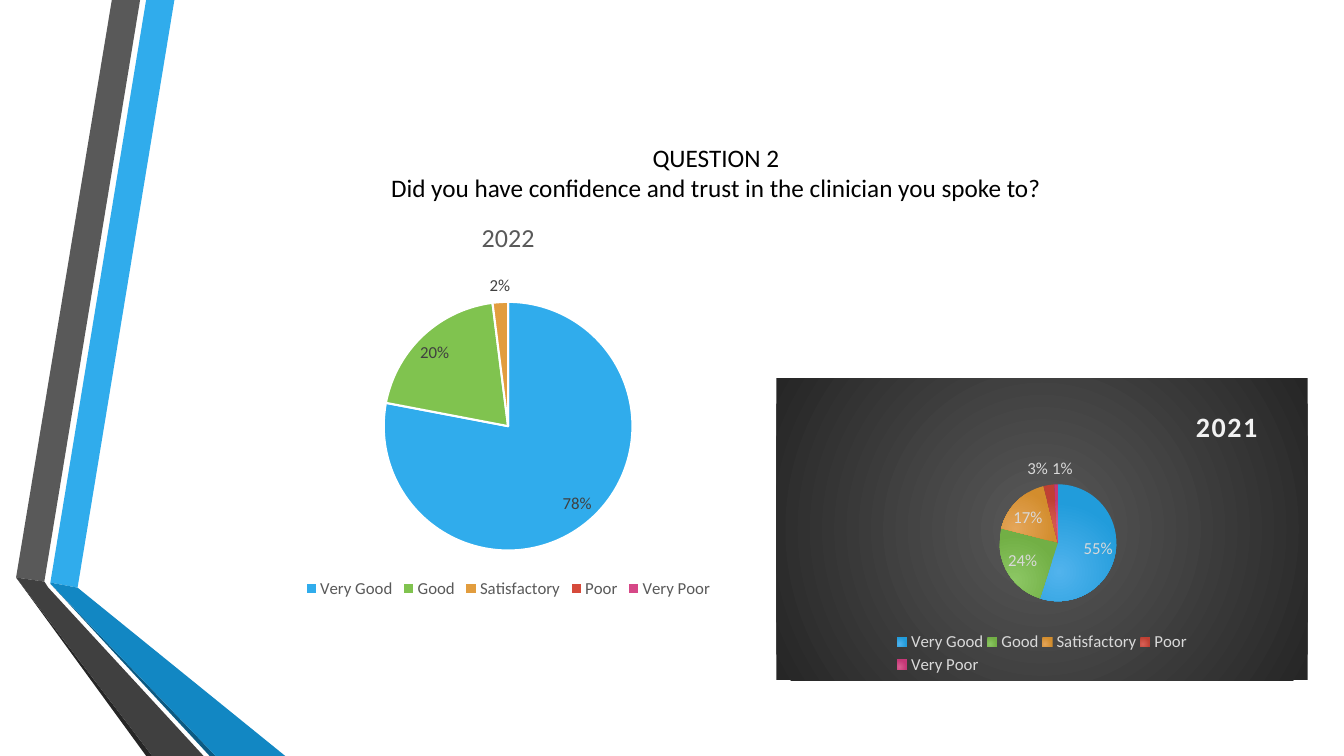
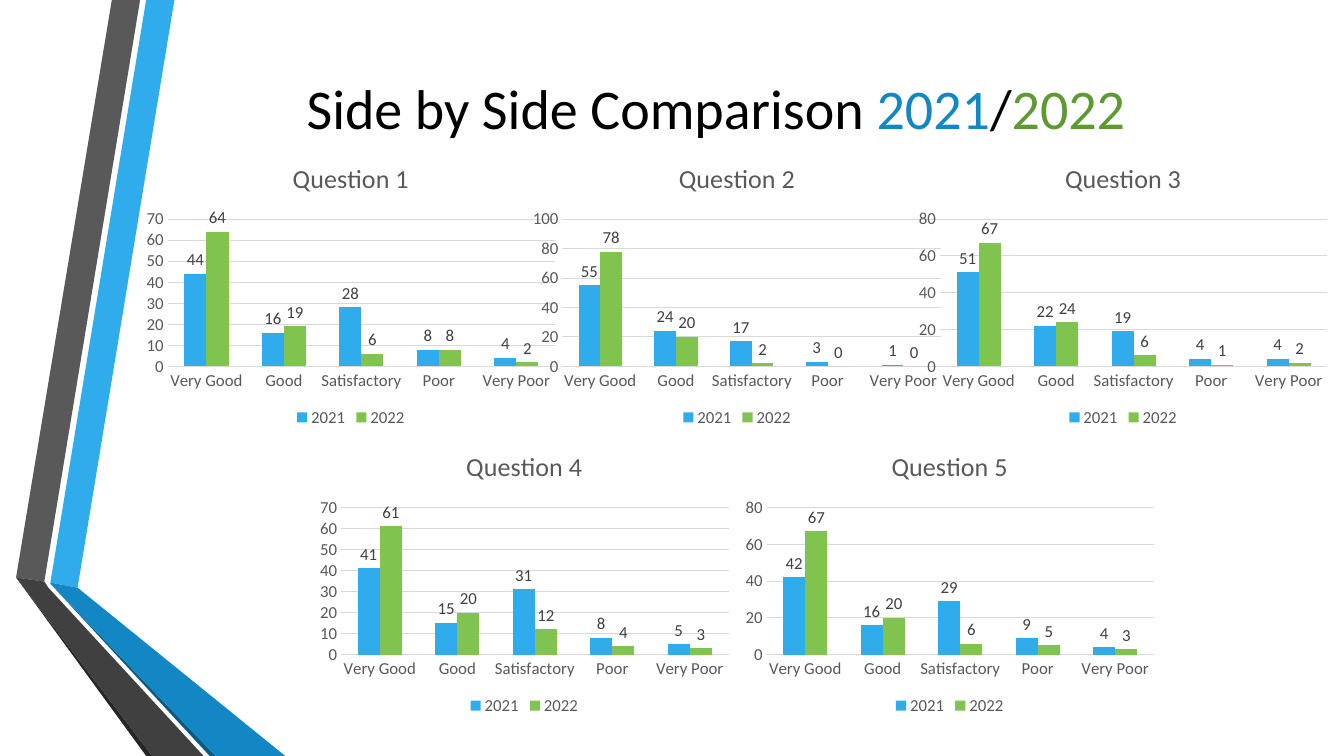
"""Builds two survey slides: a pie for each year and a column chart for each question."""
from pptx import Presentation
from pptx.chart.data import CategoryChartData
from pptx.dml.color import RGBColor
from pptx.enum.chart import XL_CHART_TYPE, XL_LABEL_POSITION, XL_LEGEND_POSITION, XL_TICK_MARK
from pptx.enum.text import MSO_ANCHOR, MSO_AUTO_SIZE, PP_ALIGN
from pptx.oxml import parse_xml
from pptx.oxml.ns import nsdecls, qn
from pptx.util import Inches, Pt

FONT = "Calibri"
COLORS = {
    "black": "000000", "white": "FFFFFF", "text": "595959", "label": "404040",
    "grid": "D9D9D9", "pale": "D9D9D9", "heading": "F2F2F2", "charcoal": "262626",
    "navy": "0C5A82", "deep_blue": "1287C3", "deep_green": "5F9934",
    "blue": "30ACEC", "green": "80C34F", "orange": "E29D3E",
    "red": "D64A3B", "pink": "D64787",
}
BANDS = [
    ("blue", [(0.5, 5.78), (0.77, 5.83), (1.73, 0), (1.45, 0)]),
    ("text", [(1.39, 0), (1.11, 0), (0.16, 5.73), (0.44, 5.77)]),
    ("charcoal", [(0.16, 5.73), (1.45, 7.5), (1.51, 7.5)]),
    ("navy", [(0.5, 5.79), (2.08, 7.5), (2.14, 7.5)]),
    ("deep_blue", [(0.5, 5.78), (0.5, 5.79), (2.14, 7.5), (2.83, 7.5), (0.77, 5.83)]),
    ("label", [(2.02, 7.5), (0.48, 5.83), (0.44, 5.77), (0.16, 5.73), (1.51, 7.5)]),
]
ANSWERS = ["Very Good", "Good", "Satisfactory", "Poor", "Very Poor"]
ANSWER_COLORS = ["blue", "green", "orange", "red", "pink"]
ANSWER_GRADIENTS = [("51B3ED", "219CDB"), ("8CC764", "72AF45"), ("E4A559", "D38D2D"),
                    ("D96157", "C04033"), ("D95F92", "C63777")]
QUESTIONS = [
    {"2021": [44, 16, 28, 8, 4], "2022": [64, 19, 6, 8, 2]},
    {"2021": [55, 24, 17, 3, 1], "2022": [78, 20, 2, 0, 0]},
    {"2021": [51, 22, 19, 4, 4], "2022": [67, 24, 6, 1, 2]},
    {"2021": [41, 15, 31, 8, 5], "2022": [61, 20, 12, 4, 3]},
    {"2021": [42, 16, 29, 9, 4], "2022": [67, 20, 6, 5, 3]},
]
TRUST = QUESTIONS[1]
TRUST_TITLE = [("QUESTION 2", "black"), ("\v", "black"),
               ("Did you have confidence and trust in the clinician you spoke to?", "black")]
COMPARISON_TITLE = [("Side by Side Comparison ", "black"), ("2021", "deep_blue"),
                    ("/", "black"), ("2022", "deep_green")]
CHART_SIZE = (4.22, 2.85)
CHART_ROWS = [(1.37, 1.43, 3.83, 3), (3.09, 4.29, 4.22, 2)]


def rgb(name):
    return RGBColor.from_string(COLORS[name])


def style_font(font, size, color, bold=False):
    values = {"name": FONT, "size": Pt(size), "bold": bold}
    for attribute, value in values.items():
        setattr(font, attribute, value)
    font.color.rgb = rgb(color)


def add_bands(slide, layout):
    for placeholder in list(layout.placeholders)[1:]:
        placeholder.element.getparent().remove(placeholder.element)
    title = layout.placeholders[0].element
    for color, points in BANDS:
        corners = [(Inches(x), Inches(y)) for x, y in points]
        builder = slide.shapes.build_freeform(*corners[0])
        builder.add_line_segments(corners[1:], close=True)
        band = builder.convert_to_shape()
        band.shadow.inherit = False
        band.fill.solid()
        band.fill.fore_color.rgb = rgb(color)
        band.line.fill.background()
        title.addprevious(band.element)


def set_title(slide, runs, top, size):
    title = slide.shapes.title
    box = {"left": 1.62, "top": top, "width": 10.96, "height": 1.92}
    for attribute, value in box.items():
        setattr(title, attribute, Inches(value))
    frame = title.text_frame
    frame.auto_size = MSO_AUTO_SIZE.NONE
    frame.vertical_anchor = MSO_ANCHOR.MIDDLE
    paragraph = frame.paragraphs[0]
    paragraph.alignment = PP_ALIGN.CENTER
    for text, color in runs:
        if text == "\v":
            paragraph.add_line_break()
            continue
        run = paragraph.add_run()
        run.text = text
        style_font(run.font, size, color)


def add_survey_chart(slide, kind, box, title, series, text="text", label="label"):
    data = CategoryChartData()
    data.categories = ANSWERS
    for name, values in series.items():
        data.add_series(name, values)
    chart = slide.shapes.add_chart(kind, *[Inches(value) for value in box], data).chart
    style_font(chart.font, 12, text)
    chart.has_title = True
    paragraph = chart.chart_title.text_frame.paragraphs[0]
    run = paragraph.add_run()
    run.text = title
    style_font(run.font, 18.6, text)
    chart.has_legend = True
    chart.legend.position = XL_LEGEND_POSITION.BOTTOM
    chart.legend.include_in_layout = False
    style_font(chart.legend.font, 12, text)
    plot = chart.plots[0]
    plot.has_data_labels = True
    style_font(plot.data_labels.font, 12, label)
    return chart


def add_pie(slide, box, year, **colors):
    chart = add_survey_chart(slide, XL_CHART_TYPE.PIE, box, year, {"Series 1": TRUST[year]}, **colors)
    plot = chart.plots[0]
    plot.vary_by_categories = True
    settings = {"show_value": False, "show_percentage": True, "number_format": "0%",
                "number_format_is_linked": False, "position": XL_LABEL_POSITION.BEST_FIT}
    for attribute, value in settings.items():
        setattr(plot.data_labels, attribute, value)
    for index, color in enumerate(ANSWER_COLORS):
        point = plot.series[0].points[index].format
        point.fill.solid()
        point.fill.fore_color.rgb = rgb(color)
        point.line.color.rgb = rgb("white")
        point.line.width = Pt(1.5)
    return chart


def place_part(chart, part, **fractions):
    element = next(chart.element.iter(qn("c:" + part)))
    for layout in element.findall(qn("c:layout")):
        element.remove(layout)
    target = '<c:layoutTarget val="inner"/>' if part == "plotArea" else ""
    modes = "".join(f'<c:{axis}Mode val="edge"/>' for axis in "xy")
    values = "".join(f'<c:{key} val="{value}"/>' for key, value in fractions.items())
    layout = parse_xml(f'<c:layout {nsdecls("c")}><c:manualLayout>{target}{modes}{values}'
                       '</c:manualLayout></c:layout>')
    element.insert(0 if part == "plotArea" else 1, layout)


def gradient_xml(colors, left, top, right, bottom):
    stops = "".join(f'<a:gs pos="{position}"><a:srgbClr val="{color}"/></a:gs>'
                    for position, color in zip((0, 100000), colors))
    return (f'<a:gradFill {nsdecls("a")} rotWithShape="1"><a:gsLst>{stops}</a:gsLst>'
            f'<a:path path="circle"><a:fillToRect l="{left}" t="{top}" r="{right}" b="{bottom}"/>'
            '</a:path></a:gradFill>')


def darken_pie(chart):
    for index, colors in enumerate(ANSWER_GRADIENTS):
        chart.plots[0].series[0].points[index].format.line.fill.background()
    points = chart.element.iter(qn("c:dPt"))
    for point, colors in zip(points, ANSWER_GRADIENTS):
        properties = point.find(qn("c:spPr"))
        gradient = parse_xml(gradient_xml(colors, 50000, 100000, 100000, 50000))
        properties.replace(properties.find(qn("a:solidFill")), gradient)
    background = gradient_xml((COLORS["text"], COLORS["charcoal"]), *[50000] * 4)
    properties = parse_xml(f'<c:spPr {nsdecls("c", "a")}>{background}<a:ln><a:noFill/></a:ln></c:spPr>')
    chart.element.find(qn("c:chart")).addnext(properties)
    font = chart.chart_title.text_frame.paragraphs[0].runs[0].font
    style_font(font, 20, "heading", bold=True)
    next(chart.chart_title.element.iter(qn("a:r"))).find(qn("a:rPr")).set("spc", "100")


def add_columns(slide, box, title, series):
    chart = add_survey_chart(slide, XL_CHART_TYPE.COLUMN_CLUSTERED, box, title, series)
    plot = chart.plots[0]
    plot.gap_width = 150
    plot.overlap = 0
    plot.vary_by_categories = False
    plot.data_labels.show_value = True
    plot.data_labels.position = XL_LABEL_POSITION.OUTSIDE_END
    for column, color in zip(plot.series, ANSWER_COLORS):
        column.format.fill.solid()
        column.format.fill.fore_color.rgb = rgb(color)
    for axis in (chart.category_axis, chart.value_axis):
        axis.major_tick_mark = XL_TICK_MARK.NONE
        axis.minor_tick_mark = XL_TICK_MARK.NONE
        axis.format.line.fill.background()
        style_font(axis.tick_labels.font, 12, "text")
    chart.value_axis.has_major_gridlines = True
    line = chart.value_axis.major_gridlines.format.line
    line.color.rgb = rgb("grid")
    line.width = Pt(0.75)


def build_trust_slide(slide):
    set_title(slide, TRUST_TITLE, 0.75, 18)
    current = add_pie(slide, (1.13, 2, 7.82, 3.98), "2022")
    place_part(current, "plotArea", x=0.34, y=0.25, w=0.32, h=0.62)
    previous = add_pie(slide, (7.7, 3.75, 5.27, 3), "2021", text="pale", label="pale")
    darken_pie(previous)
    place_part(previous, "title", x=0.78, y=0.08)
    place_part(previous, "plotArea", x=0.42, y=0.35, w=0.22, h=0.39)
    place_part(previous, "legend", x=0.22, y=0.83, w=0.56, h=0.16)


def build_comparison_slide(slide):
    set_title(slide, COMPARISON_TITLE, 0.1, 40)
    spots = [(left + step * column, top)
             for left, top, step, count in CHART_ROWS for column in range(count)]
    for number, (spot, series) in enumerate(zip(spots, QUESTIONS), 1):
        add_columns(slide, spot + CHART_SIZE, f"Question {number}", series)


def main():
    presentation = Presentation()
    presentation.slide_width = Inches(13.33)
    presentation.slide_height = Inches(7.5)
    layout = presentation.slide_layouts[5]
    slides = [presentation.slides.add_slide(layout) for _ in range(2)]
    add_bands(slides[0], layout)
    build_trust_slide(slides[0])
    build_comparison_slide(slides[1])
    presentation.save("out.pptx")


if __name__ == "__main__":
    main()
